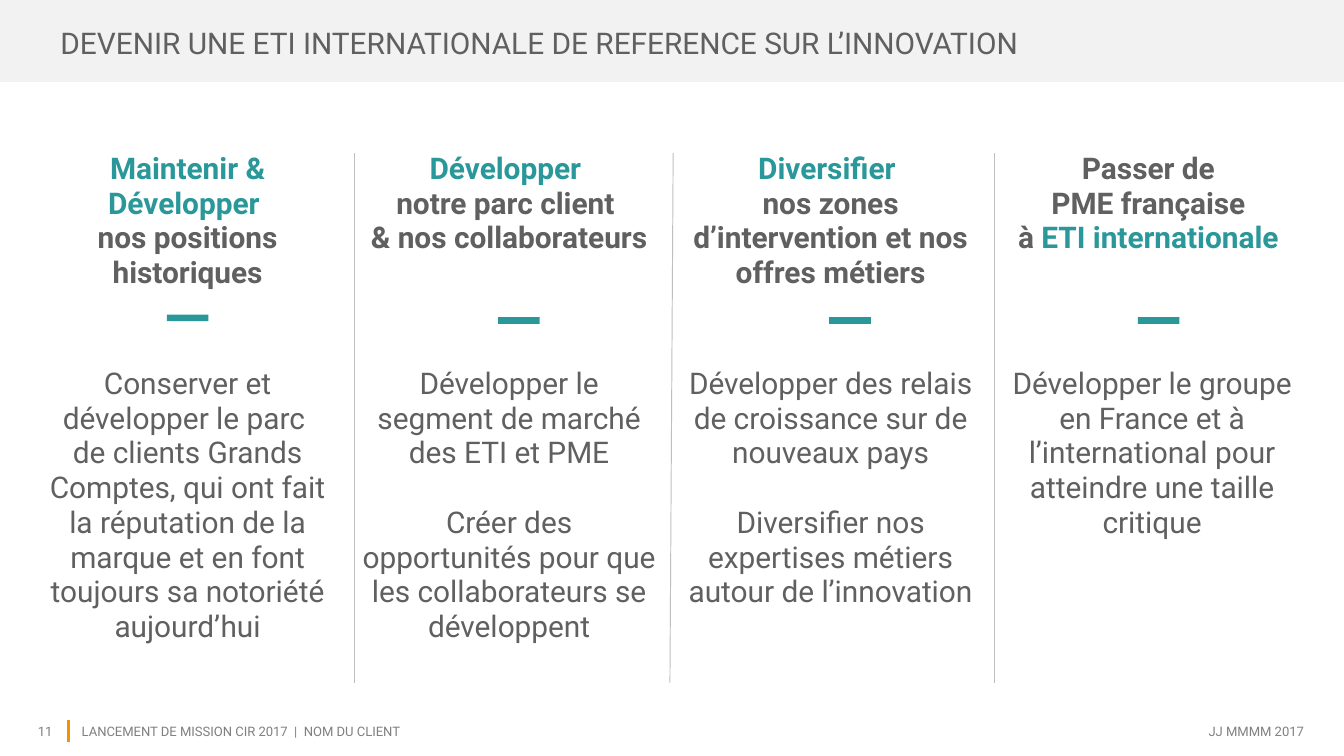
from collections import namedtuple

from lxml import etree
from pptx import Presentation
from pptx.dml.color import RGBColor
from pptx.enum.shapes import MSO_CONNECTOR, MSO_SHAPE
from pptx.enum.text import MSO_ANCHOR, MSO_AUTO_SIZE, PP_ALIGN
from pptx.oxml.ns import qn
from pptx.util import Inches, Pt

LEFT, CENTER, RIGHT = PP_ALIGN.LEFT, PP_ALIGN.CENTER, PP_ALIGN.RIGHT
MIDDLE = MSO_ANCHOR.MIDDLE
RECTANGLE, STRAIGHT = MSO_SHAPE.RECTANGLE, MSO_CONNECTOR.STRAIGHT
TITLE_ONLY = 5

Box = namedtuple("Box", "left top width height")
Pillar = namedtuple("Pillar", "heading body dash_shift dash_lift")


class Theme:
    font = "Roboto"
    text, accent, muted = "606060", "2A979A", "808080"
    band, divider, marker = "F2F2F2", "BFBFBF", "F29400"
    main_size, footer_size = 16, 7
    paragraph_gap = 18.75
    divider_width, marker_width = 0.5, 1.75


SLIDE = Box(0, 0, 10, 10 * 9 / 16)
HEADER = Box(0, 0, SLIDE.width, 0.61)
GRID = Box(0.2, 1.08, 9.57, 4)
FOOTER = Box(0, 5.28, SLIDE.width, 0.32)
ROW_SHARES = (0.4, 0.6)

TITLE = "DEVENIR UNE ETI INTERNATIONALE DE REFERENCE SUR L’INNOVATION"
# A heading is a list of paragraphs, each a list of (text, colour) runs.
# Dash shifts are shares of the column width from its middle; lifts are inches.
PILLARS = [
    Pillar(
        [[("Maintenir & Développer ", Theme.accent)],
         [("nos positions historiques", Theme.text)]],
        ["Conserver et développer le parc \nde clients Grands Comptes, qui ont fait "
         "la réputation de la marque et en font toujours sa notoriété aujourd’hui"],
        0, 0.02),
    Pillar(
        [[("Développer \n", Theme.accent), ("notre parc client ", Theme.text)],
         [("& nos collaborateurs", Theme.text)]],
        ["Développer le segment de marché des ETI et PME",
         "Créer des opportunités pour que les collaborateurs se développent"],
        0.03, 0),
    Pillar(
        [[("Diversifier ", Theme.accent)],
         [("nos zones d’intervention et nos offres métiers", Theme.text)]],
        ["Développer des relais de croissance sur de nouveaux pays",
         "Diversifier nos expertises métiers autour de l’innovation"],
        0.06, 0),
    Pillar(
        [[("Passer de \nPME française \nà ", Theme.text),
          ("ETI internationale ", Theme.accent)]],
        ["Développer le groupe en France et à l’international pour atteindre "
         "une taille critique"],
        0.02, 0),
]
# Shifts of each divider's top and bottom ends, as shares of the column width.
DIVIDER_SHIFTS = [(0.02, 0.02), (0.01, 0), (0.01, 0.01)]


def emu(box):
    return [Inches(length) for length in box]


def add_run(paragraph, text, color, size, bold=False):
    for index, line in enumerate(text.split("\n")):
        if index:
            paragraph.add_line_break()
        if line:
            run = paragraph.add_run()
            run.text = line
            run.font.name = Theme.font
            run.font.size = Pt(size)
            run.font.bold = bold
            run.font.color.rgb = RGBColor.from_string(color)


def fill_frame(frame, paragraphs, size, bold=False, align=LEFT, gap=0):
    for index, runs in enumerate(paragraphs):
        paragraph = frame.add_paragraph() if index else frame.paragraphs[0]
        paragraph.alignment = align
        if index:
            paragraph.space_before = Pt(gap)
        for text, color in runs:
            add_run(paragraph, text, color, size, bold)


def add_block(slide, box, color):
    block = slide.shapes.add_shape(RECTANGLE, *emu(box))
    block.shadow.inherit = False
    block.fill.solid()
    block.fill.fore_color.rgb = RGBColor.from_string(color)
    block.line.fill.background()
    return block


def add_rule(slide, start, end, color, width):
    rule = slide.shapes.add_connector(STRAIGHT, *emu(start + end))
    rule.line.color.rgb = RGBColor.from_string(color)
    rule.line.width = Pt(width)
    etree.SubElement(rule._element.spPr, qn("a:effectLst"))


def add_header(slide, box):
    band = add_block(slide, box, Theme.band)
    title = slide.shapes.title
    title._element.addprevious(band._element)
    title.left, title.top, title.width, title.height = emu(
        (box.left + 0.35, box.top + 0.13, box.width - 1.73, 0.38))
    frame = title.text_frame
    frame.auto_size = MSO_AUTO_SIZE.NONE
    frame.vertical_anchor = MIDDLE
    fill_frame(frame, [[(TITLE, Theme.text)]], Theme.main_size)


def add_pillars(slide, box):
    table = slide.shapes.add_table(len(ROW_SHARES), len(PILLARS), *emu(box)).table
    table.first_row = table.horz_banding = False
    for row, share in zip(table.rows, ROW_SHARES):
        row.height = Inches(box.height * share)
    column_width = box.width / len(PILLARS)
    for index, pillar in enumerate(PILLARS):
        table.columns[index].width = Inches(column_width)
        heading, body = table.cell(0, index), table.cell(1, index)
        for cell in (heading, body):
            cell.fill.background()
        fill_frame(heading.text_frame, pillar.heading, Theme.main_size, True, CENTER)
        fill_frame(body.text_frame, [[(text, Theme.text)] for text in pillar.body],
                   Theme.main_size, False, CENTER, Theme.paragraph_gap)
        middle = box.left + column_width * (index + 0.5 + pillar.dash_shift)
        dash_top = box.top + box.height * 0.32 - pillar.dash_lift
        add_block(slide, Box(middle - 0.31 / 2, dash_top, 0.31, 0.05), Theme.accent)

    for index, (upper, lower) in enumerate(DIVIDER_SHIFTS, start=1):
        add_rule(slide,
                 (box.left + column_width * (index + upper), box.top + 0.06),
                 (box.left + column_width * (index + lower), box.top + box.height),
                 Theme.divider, Theme.divider_width)


def add_footer(slide, box):
    entries = [
        ("11", Box(box.left, box.top + 0.02, 0.47, 0.28), RIGHT, 0.1, 0.08),
        ("LANCEMENT DE MISSION CIR 2017  |  NOM DU CLIENT",
         Box(box.left + 0.51, box.top, 7.56, box.height), LEFT, 0.1, 0.1),
        ("JJ MMMM 2017",
         Box(box.left + 8.46, box.top, 1.34, box.height), RIGHT, 0.04, 0.1),
    ]
    for text, place, align, left_inset, right_inset in entries:
        frame = slide.shapes.add_textbox(*emu(place)).text_frame
        frame.word_wrap = True
        frame.vertical_anchor = MIDDLE
        frame.margin_left, frame.margin_right = Inches(left_inset), Inches(right_inset)
        fill_frame(frame, [[(text, Theme.muted)]], Theme.footer_size, align=align)
    marker_x = box.left + 0.51
    add_rule(slide, (marker_x, box.top + box.height * 0.25),
             (marker_x, box.top + box.height * 0.75),
             Theme.marker, Theme.marker_width)


def main():
    deck = Presentation()
    deck.slide_width, deck.slide_height = Inches(SLIDE.width), Inches(SLIDE.height)
    slide = deck.slides.add_slide(deck.slide_layouts[TITLE_ONLY])
    add_header(slide, HEADER)
    add_pillars(slide, GRID)
    add_footer(slide, FOOTER)
    deck.save("out.pptx")


if __name__ == "__main__":
    main()
